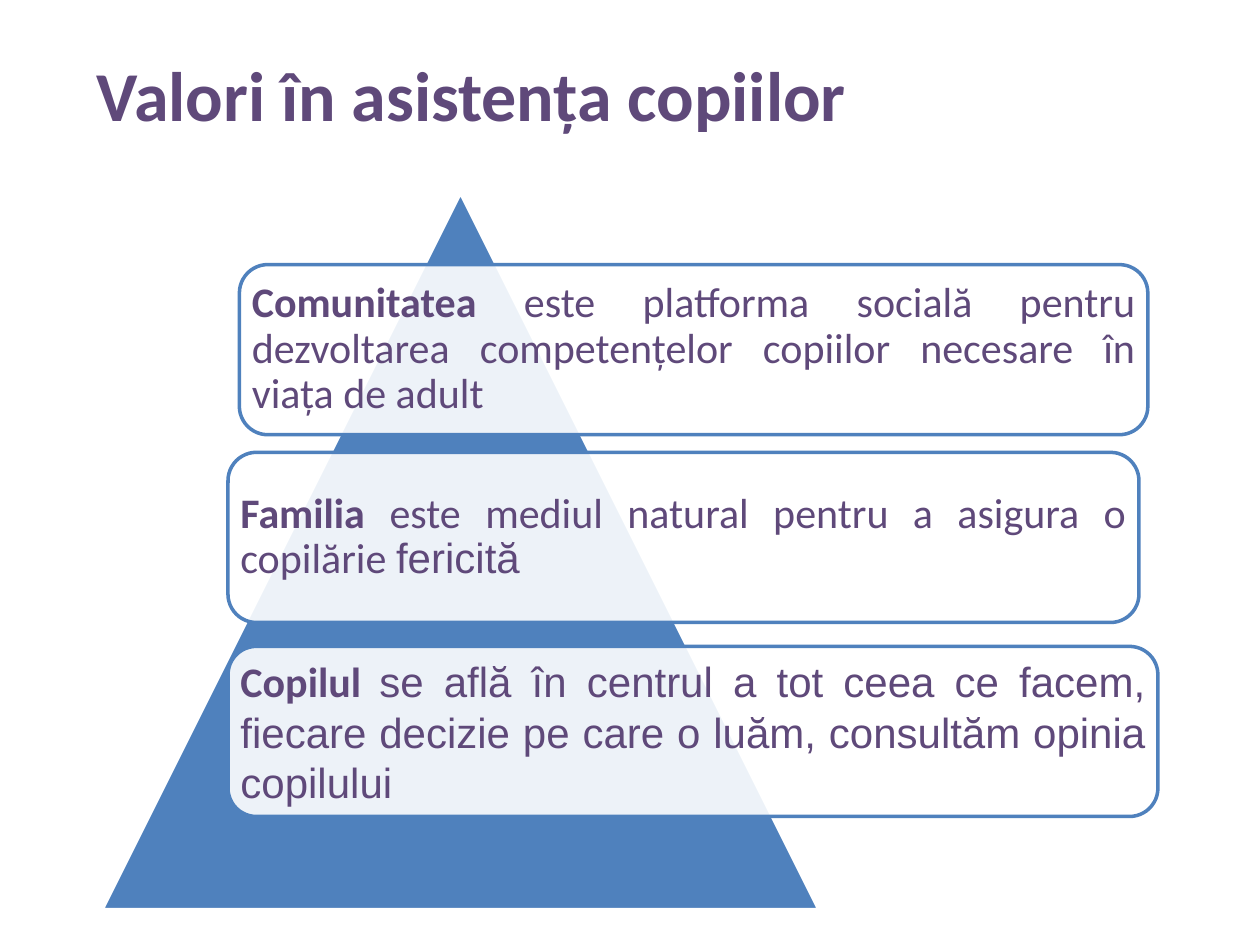
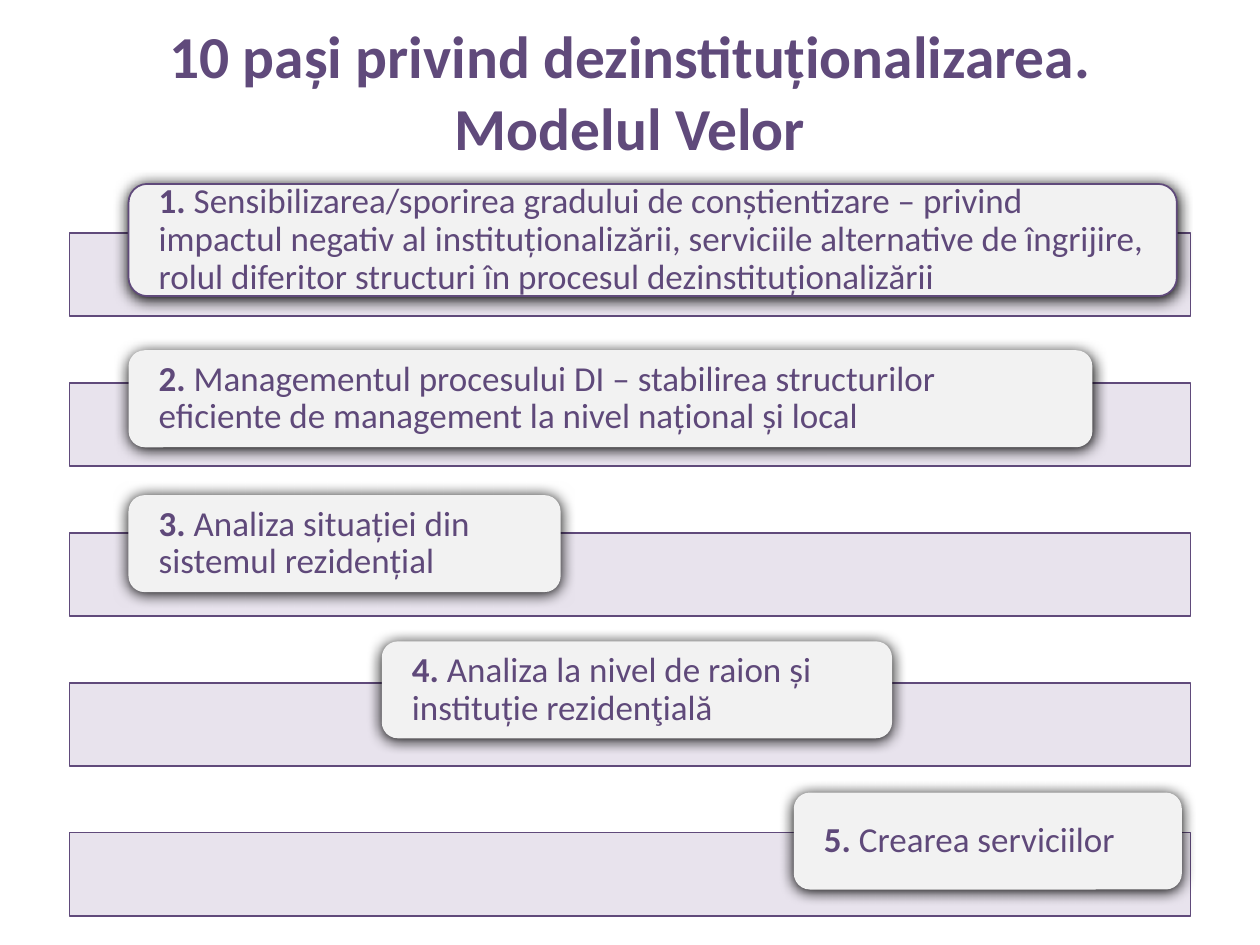
from lxml import etree
from pptx import Presentation
from pptx.dml.color import RGBColor
from pptx.enum import shapes, text
from pptx.oxml import ns
from pptx.util import Inches, Pt

HUES = {"ink": "5F497A", "plum": "604A7B", "lilac": "E6E0EC",
        "blue": "4F81BD", "white": "FFFFFF", "card": "F2F2F2"}
BODY, SANS = "Calibri", "Arial"
CORNER = 0.05  # share of a rounded box's height that its corners take from the text
KIND = shapes.MSO_SHAPE
ALIGN = text.PP_ALIGN


def tint(name):
    return RGBColor.from_string(HUES[name])


def draw(slide, kind, box, fill, line=None, width=1, alpha=None):
    shape = slide.shapes.add_shape(kind, *map(Inches, box))
    shape.shadow.inherit = False
    shape.fill.solid()
    shape.fill.fore_color.rgb = tint(fill)
    if alpha:
        color = shape.fill._xPr.find(".//" + ns.qn("a:srgbClr"))
        etree.SubElement(color, ns.qn("a:alpha"), val=str(alpha * 1000))
    if line:
        shape.line.color.rgb = tint(line)
        shape.line.width = Pt(width)
    else:
        shape.line.fill.background()
    return shape


def cast(shape):
    """Give the shape a soft dark shadow just below it."""
    effects = shape._element.spPr.find(ns.qn("a:effectLst"))
    shade = etree.SubElement(effects, ns.qn("a:outerShdw"), blurRad=str(Pt(8.5)),
                             dist=str(Pt(1)), dir="5400000", rotWithShape="0")
    etree.SubElement(shade, ns.qn("a:srgbClr"), val="000000")


def write(para, runs, size, hue="ink"):
    """Add runs of (words, bold, font)."""
    for words, bold, face in runs:
        run = para.add_run()
        run.text = words
        run.font.size, run.font.bold, run.font.name = Pt(size), bold, face
        run.font.color.rgb = tint(hue)


def label(shape, box, runs, size, pad, align, space):
    """Set text in a rounded box, pad = (side, top)."""
    frame = shape.text_frame
    frame.word_wrap = True
    frame.vertical_anchor = text.MSO_ANCHOR.MIDDLE
    side, top = (Inches(max(0, gap - CORNER * box[3])) for gap in pad)
    frame.margin_left = frame.margin_right = side
    frame.margin_top = frame.margin_bottom = top
    para = frame.paragraphs[0]
    para.alignment, para.line_spacing = align, space
    write(para, runs, size)


def title(slide, box, lines, size, hue, align, anchor):
    frame = slide.shapes.add_textbox(*map(Inches, box)).text_frame
    frame.word_wrap = True
    frame.vertical_anchor = anchor
    para = frame.paragraphs[0]
    para.alignment = align
    for i, words in enumerate(lines):
        if i:
            para.add_line_break()
        write(para, [(words, True, BODY)], size, hue)


def pyramid(slide, box, values):
    """Draw the triangle and its value boxes, placed from the box's corner."""
    left, top, _, _ = box
    draw(slide, KIND.ISOSCELES_TRIANGLE, box, "blue", "white", 2)
    for x, y, wide, space, runs in values:
        spot = left + x, top + y, wide, 1.35
        shape = draw(slide, KIND.ROUNDED_RECTANGLE, spot, "white", "blue", 2, 90)
        label(shape, spot, runs, 24, (0.1, 0.1), ALIGN.JUSTIFY, space)


def steps(slide, box, items):
    """Draw one band per step, with a numbered card over each."""
    left, top, wide, high = box
    band = 0.66
    pitch = (high - band) / (len(items) - 1)
    for i, (x, rise, span, tall, line, words) in enumerate(items):
        y = top + i * pitch
        draw(slide, KIND.RECTANGLE, (left, y, wide, band), "lilac", "plum", 0.75, 90)
        spot = left + x, y - rise, span, tall
        card = draw(slide, KIND.ROUNDED_RECTANGLE, spot, "card", line)
        cast(card)
        runs = [(f"{i + 1}. ", True, BODY), (words, False, BODY)]
        label(card, spot, runs, 20, (0.24, 0), ALIGN.LEFT, 0.9)


VALUES = [
    (1.09, 0.57, 7.21, 0.9, [
        ("Comunitatea", True, BODY),
        (" este platforma socială pentru dezvoltarea competențelor copiilor "
         "necesare în viața de adult", False, BODY)]),
    (1.0, 2.06, 7.23, 0.9, [
        ("Familia", True, BODY),
        (" este mediul natural pentru a asigura o copilărie ", False, BODY),
        ("fericită", False, SANS)]),
    (1.0, 3.6, 7.38, 1.0, [
        ("Copilul ", True, BODY),
        ("se află în centrul a tot ceea ce facem, fiecare decizie pe care o luăm, "
         "consultăm opinia copilului", False, SANS)]),
]

STEPS = [
    (0.47, 0.39, 8.32, 0.89, "plum",
     "Sensibilizarea/sporirea gradului de conștientizare – privind impactul negativ "
     "al instituționalizării, serviciile alternative de îngrijire, rolul diferitor "
     "structuri în procesul dezinstituționalizării"),
    (0.47, 0.26, 7.65, 0.77, None,
     "Managementul procesului DI – stabilirea structurilor eficiente de management "
     "la nivel național și local"),
    (0.47, 0.3, 3.43, 0.77, None, "Analiza situației din sistemul rezidențial"),
    (2.48, 0.33, 4.05, 0.77, None, "Analiza la nivel de raion și instituție rezidenţială"),
    (5.75, 0.32, 3.08, 0.77, None, "Crearea serviciilor"),
]


def main():
    deck = Presentation()
    deck.slide_width, deck.slide_height = Inches(10), Inches(7.5)
    blank = deck.slide_layouts[6]

    slide = deck.slides.add_slide(blank)
    title(slide, (0.67, 0.36, 8.66, 1.26), ["Valori în asistența copiilor"],
          40, "ink", ALIGN.LEFT, text.MSO_ANCHOR.TOP)
    pyramid(slide, (0.81, 1.53, 5.69, 5.69), VALUES)

    slide = deck.slides.add_slide(blank)
    title(slide, (0.75, 0.21, 8.5, 1.02),
          ["10 pași privind dezinstituționalizarea.", "Modelul Velor"],
          34, "plum", ALIGN.CENTER, text.MSO_ANCHOR.MIDDLE)
    steps(slide, (0.55, 1.85, 8.9, 5.42), STEPS)

    deck.save("out.pptx")


if __name__ == "__main__":
    main()
